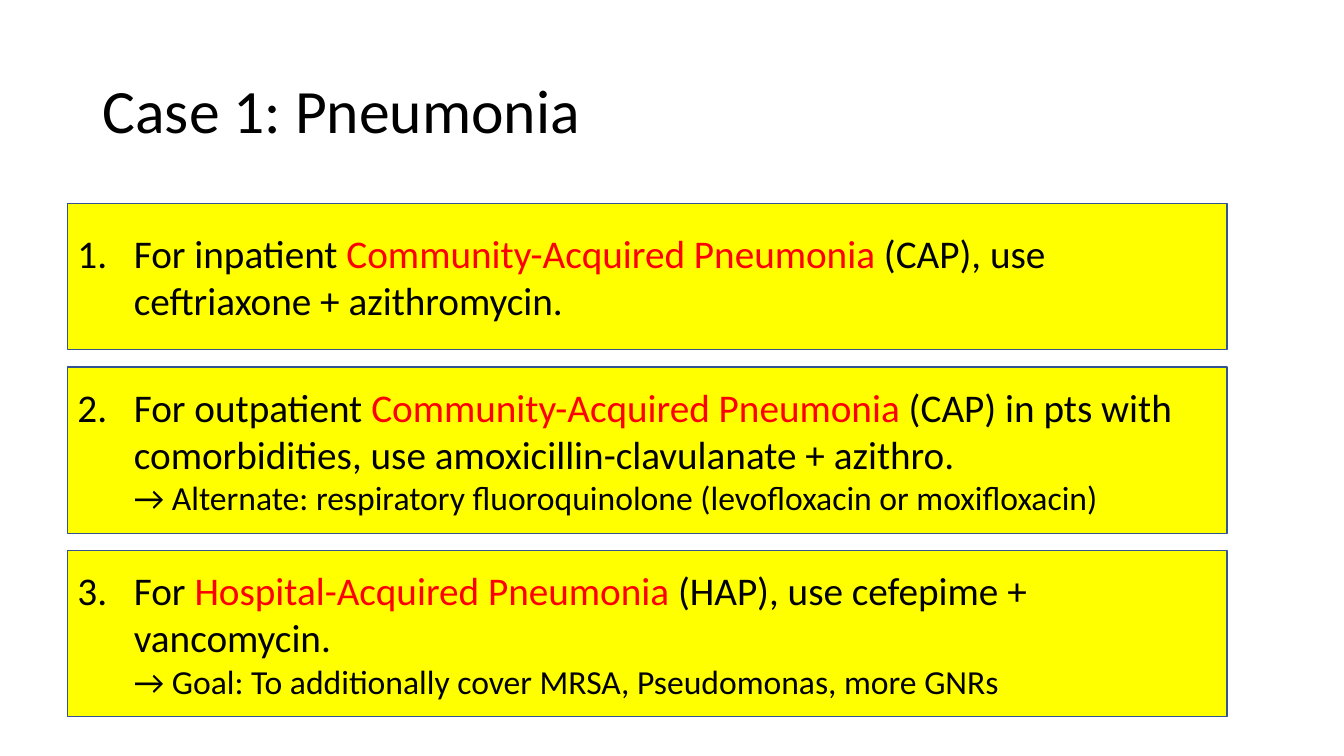
from lxml import etree
from pptx import Presentation
from pptx.dml.color import RGBColor
from pptx.enum.shapes import MSO_SHAPE
from pptx.enum.text import MSO_ANCHOR, PP_ALIGN
from pptx.oxml.ns import qn
from pptx.util import Inches, Pt

FONT = "Calibri"
BLACK, RED, YELLOW, BLUE = "000000", "FF0000", "FFFF00", "325491"

TITLE = "Case 1: Pneumonia"
CASES = [
    {"height": 1.45, "lead": "For inpatient ",
     "diagnosis": "Community-Acquired Pneumonia",
     "treatment": " (CAP), use ceftriaxone + azithromycin.",
     "note": None},
    {"height": 1.65, "lead": "For outpatient ",
     "diagnosis": "Community-Acquired Pneumonia",
     "treatment": " (CAP) in pts with comorbidities, use amoxicillin-clavulanate + azithro.",
     "note": "→ Alternate: respiratory fluoroquinolone (levofloxacin or moxifloxacin)"},
    {"height": 1.65, "lead": "For ",
     "diagnosis": "Hospital-Acquired Pneumonia",
     "treatment": " (HAP), use cefepime + vancomycin.",
     "note": "→ Goal: To additionally cover MRSA, Pseudomonas, more GNRs"},
]

BOX_LEFT, BOX_TOP, BOX_WIDTH, BOX_GAP = 0.67, 2.02, 11.5, 0.17
NUMBER_INDENT = 0.56


def color(value):
    return RGBColor.from_string(value)


def add_run(paragraph, text, size, text_color=BLACK):
    run = paragraph.add_run()
    run.text = text
    run.font.name = FONT
    run.font.size = Pt(size)
    run.font.color.rgb = color(text_color)


def number_paragraph(paragraph, number):
    properties = paragraph._p.get_or_add_pPr()
    properties.set("marL", str(Inches(NUMBER_INDENT)))
    properties.set("indent", str(-Inches(NUMBER_INDENT)))
    bullet_font = etree.SubElement(properties, qn("a:buFont"))
    bullet_font.set("typeface", FONT)
    numbering = etree.SubElement(properties, qn("a:buAutoNum"))
    numbering.set("type", "arabicPeriod")
    numbering.set("startAt", str(number))


def prepare_text(shape):
    frame = shape.text_frame
    frame.word_wrap = True
    frame.vertical_anchor = MSO_ANCHOR.MIDDLE
    paragraph = frame.paragraphs[0]
    paragraph.alignment = PP_ALIGN.LEFT
    return paragraph


def add_title(slide):
    title = slide.shapes.add_textbox(Inches(0.92), Inches(0.4), Inches(11.5), Inches(1.45))
    paragraph = prepare_text(title)
    paragraph.line_spacing = 0.9
    add_run(paragraph, TITLE, 44)


def add_case(slide, number, case, top):
    box = slide.shapes.add_shape(
        MSO_SHAPE.RECTANGLE, Inches(BOX_LEFT), Inches(top),
        Inches(BOX_WIDTH), Inches(case["height"]))
    box.shadow.inherit = False
    box.fill.solid()
    box.fill.fore_color.rgb = color(YELLOW)
    box.line.color.rgb = color(BLUE)
    box.line.width = Pt(1)
    paragraph = prepare_text(box)
    number_paragraph(paragraph, number)
    add_run(paragraph, case["lead"], 28)
    add_run(paragraph, case["diagnosis"], 28, RED)
    add_run(paragraph, case["treatment"], 28)
    if case["note"]:
        paragraph.add_line_break()
        add_run(paragraph, case["note"], 24)


def main():
    presentation = Presentation()
    presentation.slide_width = Inches(13.33)
    presentation.slide_height = Inches(7.5)
    slide = presentation.slides.add_slide(presentation.slide_layouts[6])
    add_title(slide)
    top = BOX_TOP
    for number, case in enumerate(CASES, start=1):
        add_case(slide, number, case, top)
        top += case["height"] + BOX_GAP
    presentation.save("out.pptx")


if __name__ == "__main__":
    main()
